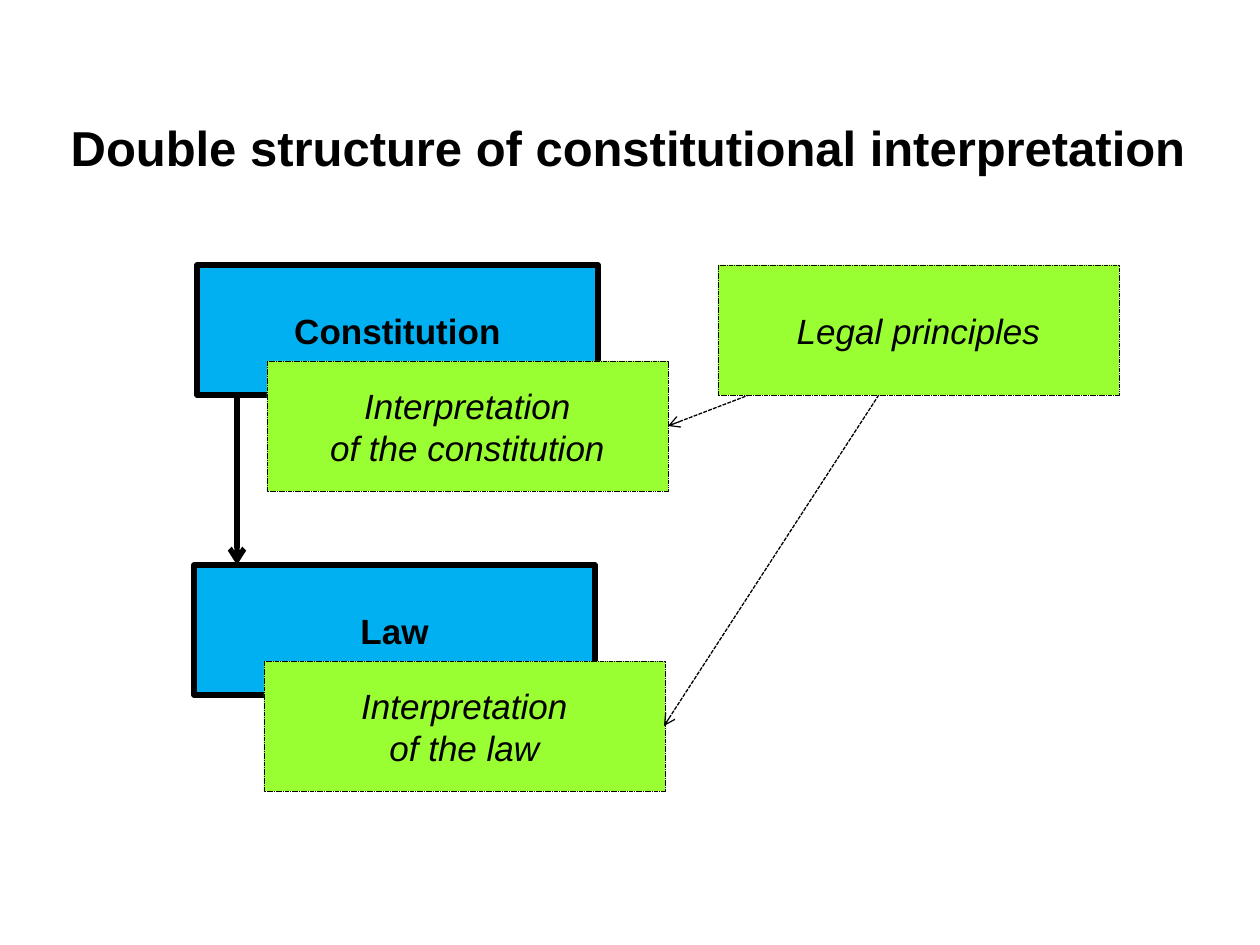
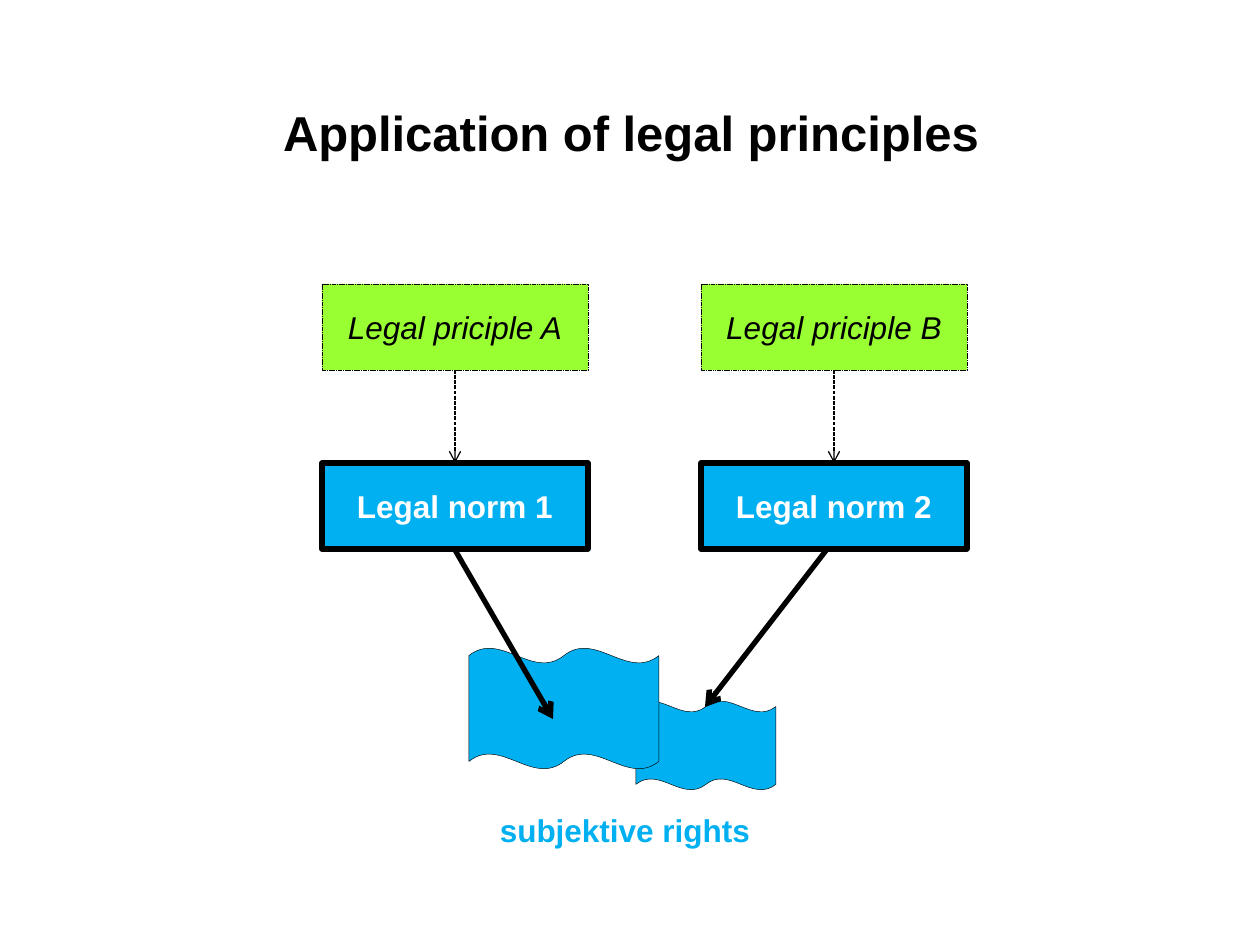
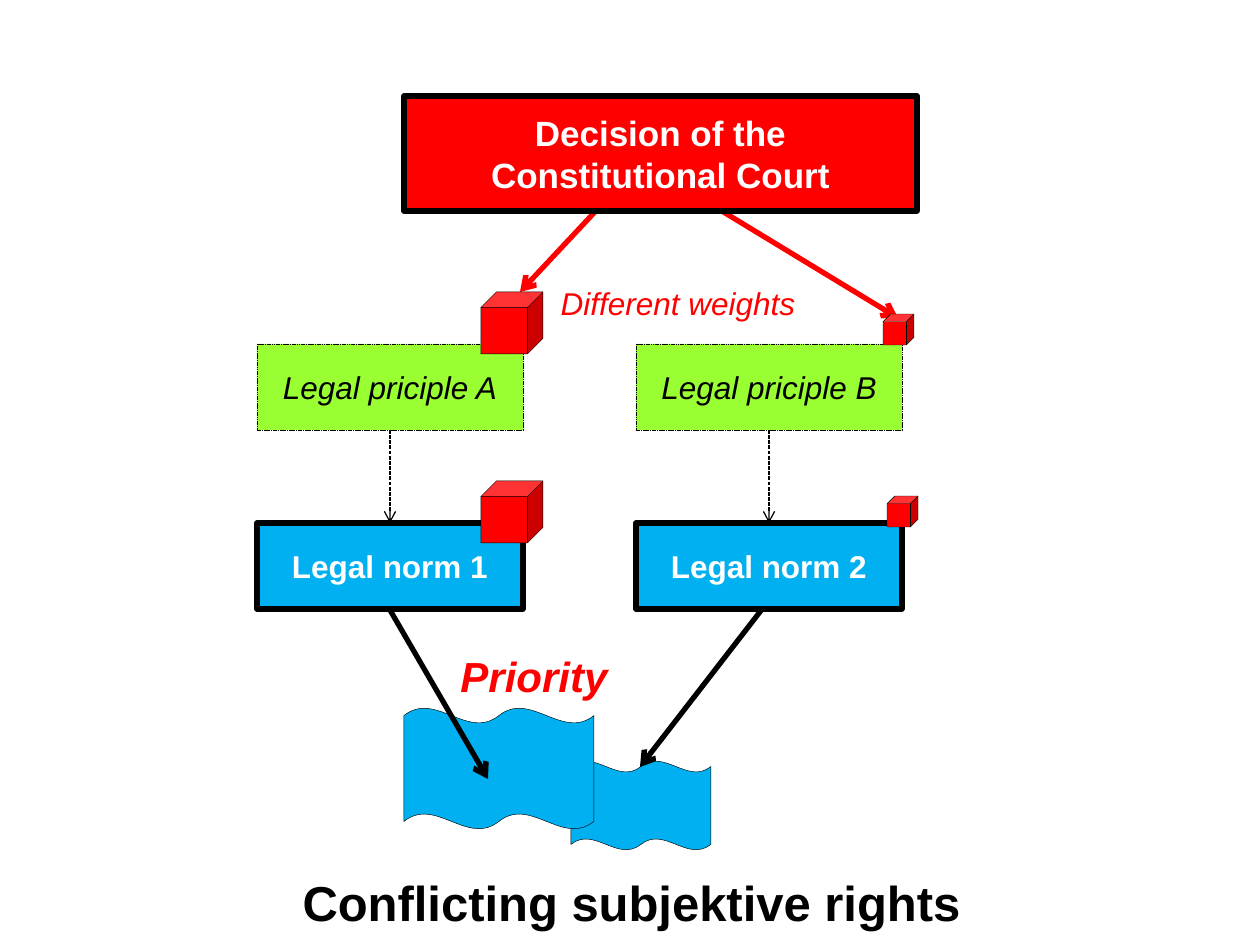
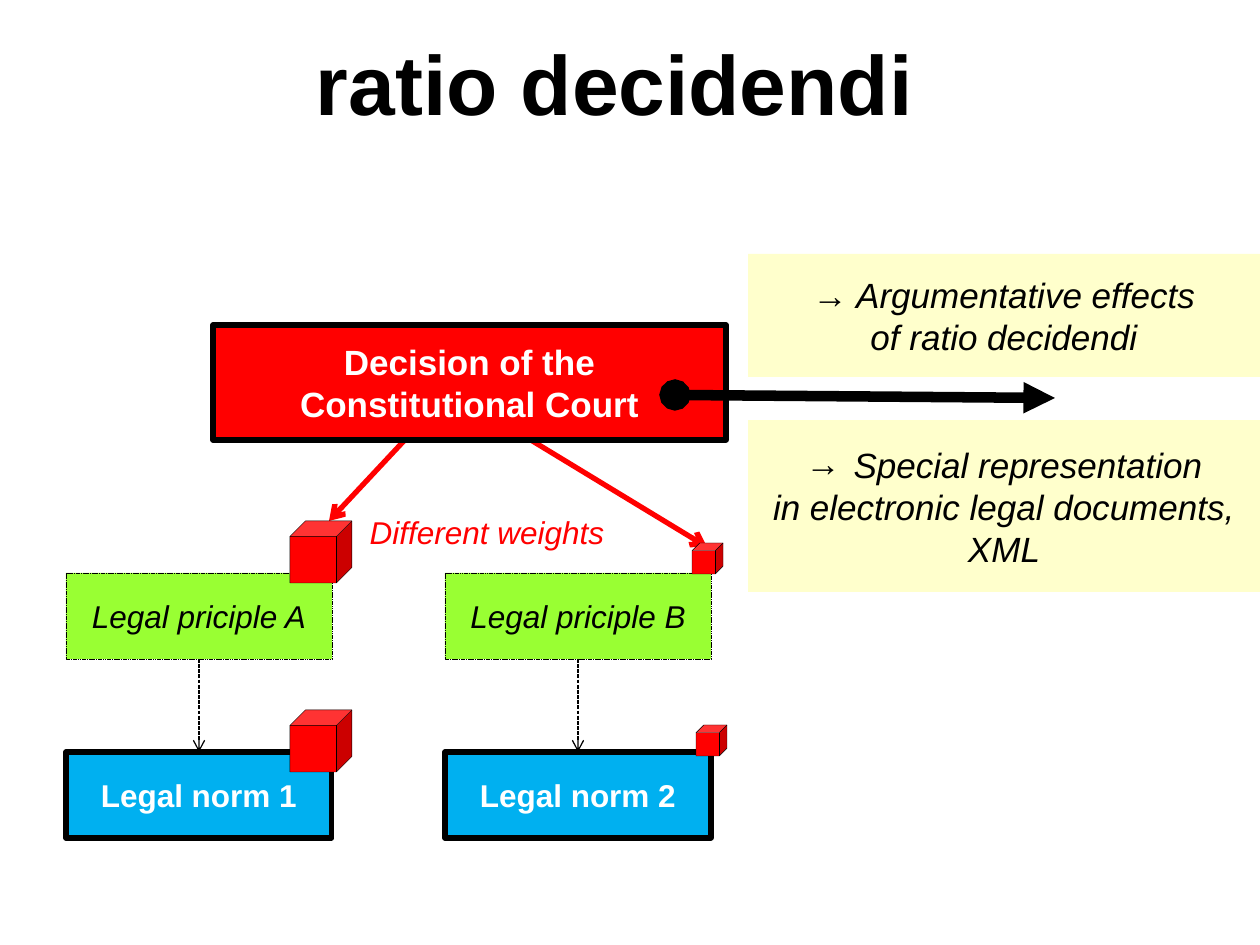
from pptx import Presentation
from pptx.dml.color import RGBColor
from pptx.enum.dml import MSO_LINE
from pptx.enum.shapes import MSO_CONNECTOR, MSO_SHAPE
from pptx.enum.text import MSO_ANCHOR, PP_ALIGN
from pptx.oxml.ns import qn
from pptx.util import Pt
from lxml import etree

RECT, WAVE, CUBE = MSO_SHAPE.RECTANGLE, MSO_SHAPE.DOUBLE_WAVE, MSO_SHAPE.CUBE
STRAIGHT = MSO_CONNECTOR.STRAIGHT
DASH = MSO_LINE.SQUARE_DOT
TOP, MIDDLE = MSO_ANCHOR.TOP, MSO_ANCHOR.MIDDLE
CENTER = PP_ALIGN.CENTER

BLACK = RGBColor(0x00, 0x00, 0x00)
WHITE = RGBColor(0xFF, 0xFF, 0xFF)
BLUE = RGBColor(0x00, 0xB0, 0xF0)
GREEN = RGBColor(0x99, 0xFF, 0x33)
RED = RGBColor(0xFF, 0x00, 0x00)
CREAM = RGBColor(0xFF, 0xFF, 0xCC)

FONT = "Arial"
PX = 914400 / 126  # EMU per pixel


def add_box(s, box, text="", kind=None, fill=None, line=None, dash=None, size=18,
            color=BLACK, bold=False, italic=False, anchor=MIDDLE, inset=(13, 6, 13, 6)):
    """Add a preset shape, or a text box when kind is None; one paragraph per text line."""
    x, y, w, h = [round(v * PX) for v in box]
    if kind is None:
        sp = s.shapes.add_textbox(x, y, w, h)
    else:
        sp = s.shapes.add_shape(kind, x, y, w, h)
        sp.shadow.inherit = False
        sp.fill.solid()
        sp.fill.fore_color.rgb = fill
        if line is None:
            sp.line.fill.background()
        else:
            sp.line.color.rgb = BLACK
            sp.line.width = Pt(line)
            sp.line.dash_style = dash
    if text:
        tf = sp.text_frame
        tf.word_wrap = True
        tf.vertical_anchor = anchor
        tf.margin_left, tf.margin_top, tf.margin_right, tf.margin_bottom = [
            round(v * PX) for v in inset]
        for i, words in enumerate(text.split("\n")):
            p = tf.paragraphs[0] if i == 0 else tf.add_paragraph()
            p.alignment = CENTER
            r = p.add_run()
            r.text = words
            r.font.name, r.font.size = FONT, Pt(size)
            r.font.bold, r.font.italic = bold, italic
            r.font.color.rgb = color
    return sp


def add_arrow(s, start, end, color=BLACK, width=3, dash=None, head=None, tail="arrow"):
    """Add a straight line from start to end, with an arrowhead at the end."""
    x1, y1, x2, y2 = [round(v * PX) for v in (*start, *end)]
    sp = s.shapes.add_connector(STRAIGHT, x1, y1, x2, y2)
    sp.line.color.rgb = color
    sp.line.width = Pt(width)
    sp.line.dash_style = dash
    spPr = sp._element.spPr
    ln = spPr.find(qn("a:ln"))
    if head:
        etree.SubElement(ln, qn("a:headEnd"), type=head)
    etree.SubElement(ln, qn("a:tailEnd"), type=tail)
    etree.SubElement(spPr, qn("a:effectLst"))


# Shared styles
TITLE = dict(size=28, bold=True, anchor=TOP)
NORM = dict(kind=RECT, fill=BLUE, line=3, bold=True)
PRINCIPLE = dict(kind=RECT, fill=GREEN, line=0.25, dash=DASH, italic=True)
COURT = dict(kind=RECT, fill=RED, line=3, size=20, color=WHITE, bold=True)
NOTE = dict(kind=RECT, fill=CREAM, size=20, italic=True)
THIN = dict(width=0.75, dash=DASH)

prs = Presentation()
prs.slide_width, prs.slide_height = round(1260 * PX), round(945 * PX)
blank = prs.slide_layouts[6]

# Slide 1: constitution and law, each with its interpretation
s = prs.slides.add_slide(blank)
add_box(s, (1, 87, 1254, 97), "Double structure of constitutional interpretation",
        inset=(13, 30, 13, 6), **TITLE)
W, H = 401, 130
for x, y, source, reading in (
        (197, 265, "Constitution", "Interpretation\nof the constitution"),
        (194, 565, "Law", "Interpretation\nof the law")):
    add_box(s, (x, y, W, H), source, size=20, **NORM)
    add_box(s, (x + 70, y + 96, W, H), reading, size=20, **PRINCIPLE)
add_arrow(s, (237, 395), (237, 565))
add_arrow(s, (919, 330), (668, 426), **THIN)
add_arrow(s, (921, 330), (664, 726), **THIN)
add_box(s, (718, 265, W, H), "Legal principles", size=20, **PRINCIPLE)

# Slides 2 to 4: the same scheme, placed by the corner of principle A
W, H = 266, 86
STEP, DROP = 379, 179  # from A to B, and from principle to norm
for x, y, has_rights, has_court in (
        (322, 284, True, False), (257, 344, True, True), (66, 573, False, True)):
    s = prs.slides.add_slide(blank)
    if has_rights:
        add_box(s, (x + 314, y + 417, 140, 89), kind=WAVE, fill=BLUE, line=0.25)
        add_box(s, (x + 147, y + 364, 190, 121), kind=WAVE, fill=BLUE, line=0.25)
        add_arrow(s, (x + 133, y + 266), (x + 231, y + 435))
        add_arrow(s, (x + 523, y + 242), (x + 383, y + 423))
    if has_court:
        add_box(s, (x + 195, y - 100, 452, 117), "Different weights", color=RED, italic=True)
        add_arrow(s, (x + 379, y - 176), (x + 263, y - 52), color=RED)
        add_arrow(s, (x + 394, y - 176), (x + 641, y - 26), color=RED)
        add_box(s, (x + 147, y - 248, 513, 115), "Decision of the Constitutional Court", **COURT)
    for i, letter in enumerate("AB"):
        left = x + i * STEP
        add_arrow(s, (left + W / 2, y + H), (left + W / 2, y + DROP), **THIN)
        add_box(s, (left, y, W, H), f"Legal priciple {letter}", **PRINCIPLE)
        add_box(s, (left, y + DROP, W, H), f"Legal norm {i + 1}", color=WHITE, **NORM)
    if has_court:
        for dx, dy, side in ((224, -52, 62), (224, 137, 62), (626, -30, 31), (630, 152, 31)):
            add_box(s, (x + dx, y + dy, side, side), kind=CUBE, fill=RED, line=0.25)

application, conflict, ratio = list(prs.slides)[1:]

# Slide 2: title and caption
add_box(application, (6, 96, 1254, 97), "Application of legal principles",
        inset=(13, 6, 17, 6), **TITLE)
add_box(application, (416, 793, 418, 74), "subjektive rights", color=BLUE, bold=True)

# Slide 3: title below the scheme, and the priority label
add_box(conflict, (0, 842, 1254, 97), "Conflicting subjektive rights",
        inset=(22, 30, 13, 6), **TITLE)
add_box(conflict, (399, 639, 270, 74), "Priority", size=24, color=RED, bold=True, italic=True)

# Slide 4: title, effects of the decision
add_box(ratio, (1, 26, 1254, 115), "ratio decidendi", inset=(13, 6, 40, 6),
        **{**TITLE, "size": 48})
add_arrow(ratio, (675, 395), (1055, 398), width=6, head="oval", tail="triangle")
add_box(ratio, (748, 254, 512, 123), "→ Argumentative effects\nof ratio decidendi", **NOTE)
sp = add_box(ratio, (748, 420, 512, 172),
             "Special representation\nin electronic legal documents,\nXML", **NOTE)
pPr = sp.text_frame.paragraphs[0]._p.get_or_add_pPr()
indent = round(48 * PX)
pPr.set("marL", str(indent))
pPr.set("indent", str(-indent))
etree.SubElement(pPr, qn("a:buFont"), typeface=FONT)
etree.SubElement(pPr, qn("a:buChar"), char="→")

prs.save("out.pptx")
